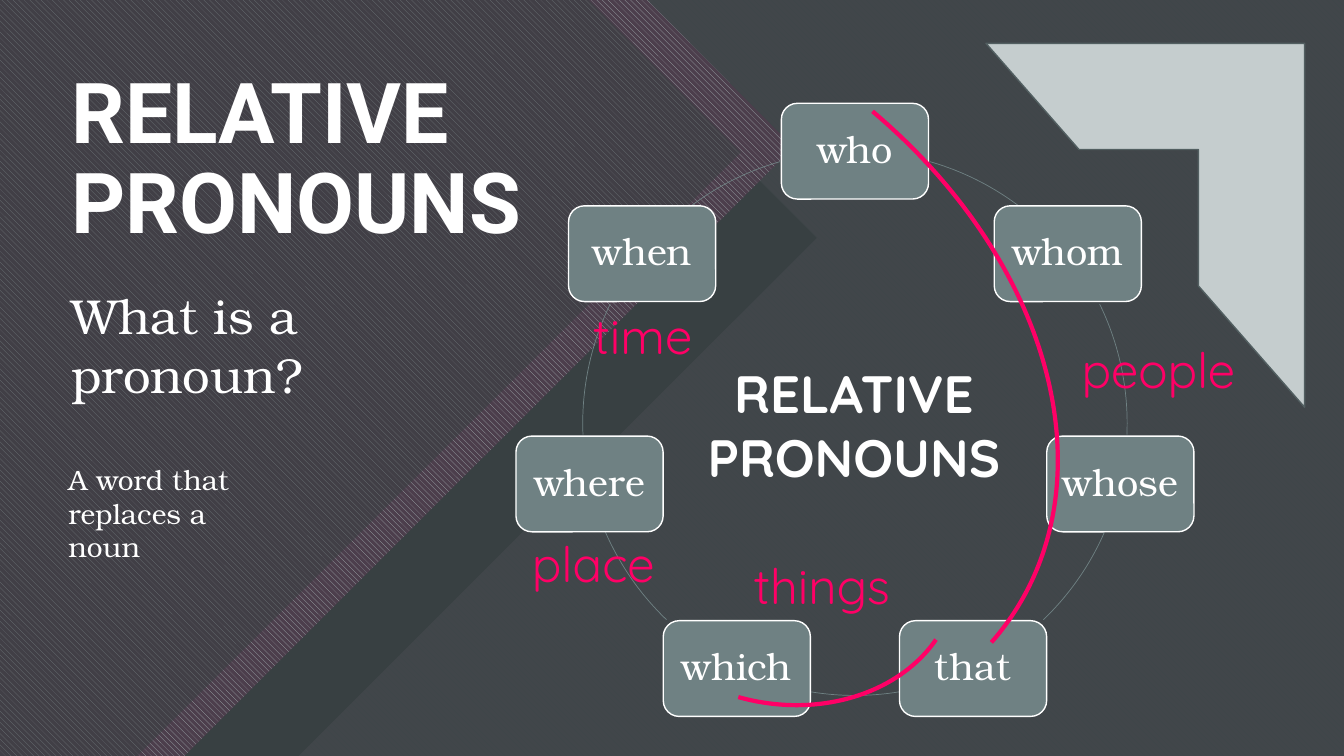
from lxml import etree
from math import cos, radians, sin

from pptx import Presentation
from pptx.dml.color import RGBColor
from pptx.enum import dml, shapes, text
from pptx.oxml import ns
from pptx.util import Inches, Pt

WHITE = RGBColor(0xFF, 0xFF, 0xFF)
PINK = RGBColor(0xFF, 0x00, 0x66)
SLATE = RGBColor(0x6F, 0x81, 0x83)
CHARCOAL = RGBColor(0x38, 0x40, 0x42)
MAUVE = RGBColor(0x96, 0x7E, 0x96)
PLUM = RGBColor(0x4C, 0x3E, 0x4C)
MIST = RGBColor(0xA8, 0xB4, 0xB5)
SILVER = RGBColor(0xC5, 0xCD, 0xCE)
STEEL = RGBColor(0x52, 0x5F, 0x61)

SERIF, ROUNDED, HEADING = "TeX Gyre Bonum", "Quicksand", "Roboto"

BASE = [(4.23, 0), (13.33, 0), (13.33, 7.5), (0, 7.5), (0, 3.63), (2.22, 1.41), (2.82, 1.41)]
SHADOW = [(0.21, 0.9), (6.64, 0.9), (8.1, 2.36), (2.96, 7.5), (0.21, 7.5)]
BAND = [(0, 0), (6.42, 0), (7.87, 1.46), (1.83, 7.5), (0, 7.5)]
PANEL = [(0, 0), (5.84, 0), (7.35, 1.51), (1.36, 7.5), (0, 7.5)]

RING_X, RING_Y, RADIUS = 8.48, 4.2, 2.7
BOX_WIDTH, BOX_HEIGHT = 1.46, 0.95
PRONOUNS = ["who", "whom", "whose", "that", "which", "where", "when"]
# Start and end, in degrees clockwise from the right, of the links between boxes
LINKS = [(286, 307), (334, 2.4), (23.6, 46.2), (80.6, 99.4),
         (133.8, 156.4), (177.6, 206), (233, 254)]

USES = [
    ("people", 10.37, 3.32, 2.24),
    ("things", 7.03, 5.46, 2.24),
    ("place", 5.04, 5.24, 1.69),
    ("time", 5.68, 2.98, 1.39),
]


def add_polygon(page, points):
    corners = [(Inches(x), Inches(y)) for x, y in points]
    builder = page.shapes.build_freeform(*corners[0])
    builder.add_line_segments(corners[1:], close=True)
    polygon = builder.convert_to_shape()
    polygon.shadow.inherit = False
    polygon.line.fill.background()
    return polygon


def add_plain(page, points, colour, opacity=100):
    polygon = add_polygon(page, points)
    polygon.fill.solid()
    polygon.fill.fore_color.rgb = colour
    if opacity < 100:
        tint = polygon.element.spPr.find(ns.qn("a:solidFill"))[0]
        etree.SubElement(tint, ns.qn("a:alpha"), val=str(opacity * 1000))


def add_striped(page, points, front, back):
    fill = add_polygon(page, points).fill
    fill.patterned()
    fill.pattern = dml.MSO_PATTERN.WIDE_DOWNWARD_DIAGONAL
    fill.fore_color.rgb = front
    fill.back_color.rgb = back


def add_preset(page, kind, left, top, width, height, line, weight, fill=None):
    shape = page.shapes.add_shape(kind, Inches(left), Inches(top), Inches(width), Inches(height))
    shape.shadow.inherit = False
    shape.line.color.rgb = line
    shape.line.width = Pt(weight)
    if fill is None:
        shape.fill.background()
    else:
        shape.fill.solid()
        shape.fill.fore_color.rgb = fill
    return shape


def add_arc(page, left, top, width, height, start, end, line, weight, rotation=0):
    """Draw an elliptical arc clockwise between two angles in degrees."""
    arc = add_preset(page, shapes.MSO_SHAPE.ARC, left, top, width, height, line, weight)
    arc.adjustments[0] = start * 0.6
    arc.adjustments[1] = end * 0.6
    arc.rotation = rotation


def write(frame, words, size, font, colour=WHITE, bold=False,
          align=text.PP_ALIGN.LEFT, anchor=text.MSO_ANCHOR.TOP, spacing=None):
    frame.word_wrap = True
    frame.auto_size = text.MSO_AUTO_SIZE.NONE
    frame.vertical_anchor = anchor
    para = frame.paragraphs[0]
    para.alignment = align
    para.line_spacing = spacing
    span = para.add_run()
    span.text = words
    span.font.size = Pt(size)
    span.font.name = font
    span.font.bold = bold
    span.font.color.rgb = colour


def add_text(page, words, left, top, width, height, size, font, **style):
    box = page.shapes.add_textbox(Inches(left), Inches(top), Inches(width), Inches(height))
    write(box.text_frame, words, size, font, **style)


def add_backdrop(page):
    page.background.fill.solid()
    page.background.fill.fore_color.rgb = SLATE
    add_striped(page, BASE, SLATE, MAUVE)
    add_plain(page, BASE, CHARCOAL, opacity=90)
    add_plain(page, SHADOW, CHARCOAL)
    add_striped(page, BAND, MIST, PLUM)
    add_plain(page, PANEL, CHARCOAL, opacity=51)


def add_title(page):
    title = page.shapes.title
    title.left, title.top = Inches(0.61), Inches(0.72)
    title.width, title.height = Inches(5.41), Inches(1.76)
    write(title.text_frame, "RELATIVE PRONOUNS", 60, HEADING, bold=True,
          anchor=text.MSO_ANCHOR.MIDDLE, spacing=0.9)
    title.element.getparent().append(title.element)  # in front of the backdrop


def add_corner(page):
    corner = add_preset(page, shapes.MSO_SHAPE.HALF_FRAME, 9.78, 0.43, 3.16, 3.61,
                        STEEL, 1, SILVER)
    corner.element.spPr.find(ns.qn("a:xfrm")).set("flipH", "1")


def add_ring(page):
    for start, end in LINKS:
        add_arc(page, RING_X - RADIUS, RING_Y - RADIUS, 2 * RADIUS, 2 * RADIUS,
                start, end, SLATE, 0.5)
    for index, pronoun in enumerate(PRONOUNS):
        angle = radians(360 * index / len(PRONOUNS) - 90)
        box = add_preset(page, shapes.MSO_SHAPE.ROUNDED_RECTANGLE,
                         RING_X + RADIUS * cos(angle) - BOX_WIDTH / 2,
                         RING_Y + RADIUS * sin(angle) - BOX_HEIGHT / 2,
                         BOX_WIDTH, BOX_HEIGHT, WHITE, 1, SLATE)
        write(box.text_frame, pronoun, 27, SERIF, align=text.PP_ALIGN.CENTER,
              anchor=text.MSO_ANCHOR.MIDDLE, spacing=0.9)


def main():
    deck = Presentation()
    deck.slide_width, deck.slide_height = Inches(13.33), Inches(7.5)
    page = deck.slides.add_slide(deck.slide_layouts[5])
    add_backdrop(page)
    add_title(page)
    add_corner(page)
    add_text(page, "What is a pronoun?", 0.61, 2.78, 3.2, 1.28, 35, SERIF)
    add_text(page, "A word that replaces a noun", 0.58, 4.54, 2.31, 1.11, 20, SERIF)
    add_ring(page)
    add_text(page, "RELATIVE PRONOUNS", 6.88, 3.49, 3.18, 1.44, 37.5, ROUNDED, bold=True,
             align=text.PP_ALIGN.CENTER, anchor=text.MSO_ANCHOR.MIDDLE, spacing=Pt(45.6))
    for words, left, top, width in USES:
        add_text(page, words, left, top, width, 0.69, 35, ROUNDED, colour=PINK,
                 align=text.PP_ALIGN.CENTER)
    add_arc(page, 6.32, 3.79, 2.87, 3.51, 285.45, 5.33, PINK, 3, rotation=102.2)
    add_arc(page, 1.3, 0.03, 9.5, 7, 285.45, 5.33, PINK, 3, rotation=31.6)
    deck.save("out.pptx")


if __name__ == "__main__":
    main()
